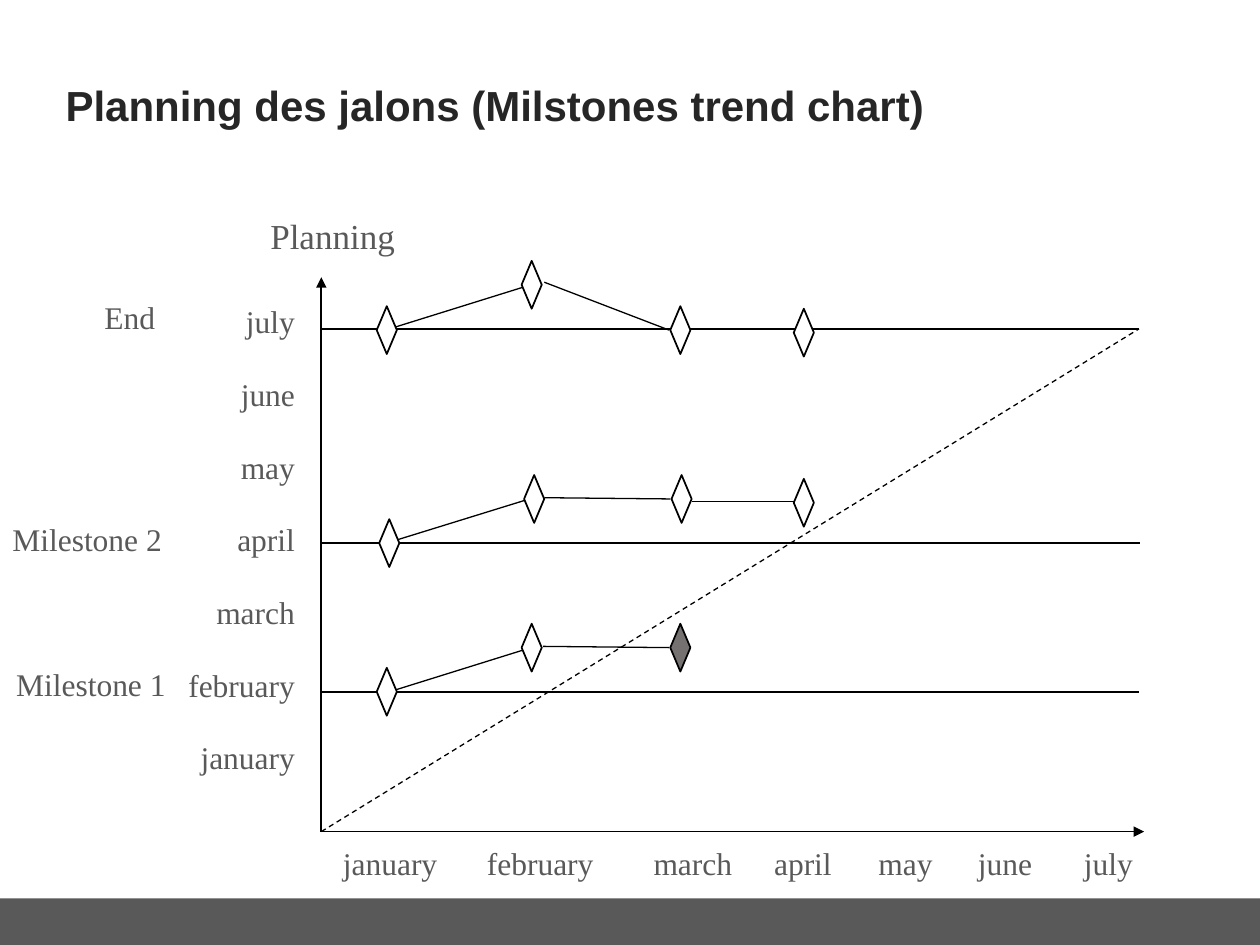
from dataclasses import dataclass
from typing import NamedTuple

import pptx
import pptx.dml.color
import pptx.enum.dml
import pptx.enum.shapes
import pptx.enum.text
import pptx.oxml
import pptx.oxml.ns
import pptx.util
from pptx.util import Inches

Align = pptx.enum.text.PP_ALIGN
Preset = pptx.enum.shapes.MSO_SHAPE


@dataclass(frozen=True)
class Theme:
    ink: str = "000000"
    title: str = "262626"
    label: str = "595959"
    band: str = "595959"
    pending: str = "FFFFFF"
    reached: str = "767171"
    title_font: str = "Arial"
    label_font: str = "Times New Roman"
    title_size: float = 24
    axis_size: float = 20
    label_size: float = 18
    axis_width: float = 1
    trend_width: float = 0.75


class Point(NamedTuple):
    x: float
    y: float


class Label(NamedTuple):
    text: str
    left: float
    top: float
    width: float
    align: Align = Align.LEFT
    size: float = 18
    height: float = 0.4


class Segment(NamedTuple):
    start: Point
    end: Point


class Milestone(NamedTuple):
    label: Label
    baseline: Segment
    markers: list[Point]
    trend: list[Segment]
    reached: bool = False


THEME = Theme()
ORIGIN = Point(2.55, 6.6)
MARKER_WIDTH, MARKER_HEIGHT = 0.16, 0.38
MONTHS = ["january", "february", "march", "april", "may", "june", "july"]
MONTH_RIGHTS = [3.57, 4.81, 5.91, 6.7, 7.5, 8.29, 9.09]
MONTH_WIDTH = 1.36
PLAN_RIGHT, PLAN_BOTTOM, PLAN_TOP = 2.44, 5.81, 2.35
TIME_TOP = 6.65

MILESTONES = [
    Milestone(
        Label("End", 0.73, 2.32, 0.84),
        Segment(Point(2.54, 2.61), Point(9.04, 2.61)),
        [Point(3.07, 2.62), Point(4.22, 2.26), Point(5.4, 2.62), Point(6.38, 2.64)],
        [Segment(Point(3.06, 2.62), Point(4.15, 2.28)),
         Segment(Point(4.32, 2.24), Point(5.31, 2.62))],
    ),
    Milestone(
        Label("Milestone 2", 0, 4.08, 1.63),
        Segment(Point(2.55, 4.31), Point(9.05, 4.31)),
        [Point(3.09, 4.31), Point(4.24, 3.96), Point(5.41, 3.96), Point(6.38, 3.99)],
        [Segment(Point(3.07, 4.31), Point(4.17, 3.97)),
         Segment(Point(4.32, 3.95), Point(5.32, 3.96)),
         Segment(Point(5.49, 3.98), Point(6.3, 3.98))],
    ),
    Milestone(
        Label("Milestone 1", 0.03, 5.23, 1.63),
        Segment(Point(2.54, 5.49), Point(9.04, 5.49)),
        [Point(3.07, 5.49), Point(4.22, 5.14), Point(5.4, 5.14)],
        [Segment(Point(3.06, 5.5), Point(4.15, 5.16)),
         Segment(Point(4.31, 5.13), Point(5.31, 5.14))],
        reached=True,
    ),
]


def color(value: str) -> pptx.dml.color.RGBColor:
    return pptx.dml.color.RGBColor.from_string(value)


def format_font(font, name: str, size: float, value: str, bold: bool = False) -> None:
    font.name = name
    font.size = pptx.util.Pt(size)
    font.bold = bold
    font.color.rgb = color(value)


def add_title(slide, text: str) -> None:
    title = slide.shapes.title
    title.left, title.top = Inches(0.42), Inches(0.46)
    title.width, title.height = Inches(9.08), Inches(0.75)
    frame = title.text_frame
    frame.text = text
    frame.word_wrap = True
    frame.auto_size = pptx.enum.text.MSO_AUTO_SIZE.NONE
    frame.vertical_anchor = pptx.enum.text.MSO_ANCHOR.MIDDLE
    paragraph = frame.paragraphs[0]
    paragraph.alignment = Align.LEFT
    format_font(paragraph.runs[0].font, THEME.title_font, THEME.title_size, THEME.title, True)


def add_label(slide, label: Label) -> None:
    shape = slide.shapes.add_textbox(
        Inches(label.left), Inches(label.top), Inches(label.width), Inches(label.height))
    frame = shape.text_frame
    frame.text = label.text
    frame.word_wrap = True
    frame.auto_size = pptx.enum.text.MSO_AUTO_SIZE.SHAPE_TO_FIT_TEXT
    paragraph = frame.paragraphs[0]
    paragraph.alignment = label.align
    format_font(paragraph.runs[0].font, THEME.label_font, label.size, THEME.label)


def add_month(slide, month: str, right: float, top: float) -> None:
    add_label(slide, Label(month, right - MONTH_WIDTH, top, MONTH_WIDTH, Align.RIGHT))


def add_shape(slide, preset: Preset, left: float, top: float, width: float, height: float,
              fill: str):
    shape = slide.shapes.add_shape(
        preset, Inches(left), Inches(top), Inches(width), Inches(height))
    shape.shadow.inherit = False
    shape.fill.solid()
    shape.fill.fore_color.rgb = color(fill)
    return shape


def add_marker(slide, center: Point, fill: str) -> None:
    shape = add_shape(slide, Preset.DIAMOND, center.x - MARKER_WIDTH / 2,
                      center.y - MARKER_HEIGHT / 2, MARKER_WIDTH, MARKER_HEIGHT, fill)
    shape.line.color.rgb = color(THEME.ink)
    shape.line.width = pptx.util.Pt(THEME.axis_width)


def add_line(slide, segment: Segment, width: float, arrow: bool = False,
             dashed: bool = False) -> None:
    start, end = segment
    connector = slide.shapes.add_connector(
        pptx.enum.shapes.MSO_CONNECTOR.STRAIGHT,
        Inches(start.x), Inches(start.y), Inches(end.x), Inches(end.y))
    connector.line.color.rgb = color(THEME.ink)
    connector.line.width = pptx.util.Pt(width)
    if dashed:
        connector.line.dash_style = pptx.enum.dml.MSO_LINE.DASH
    properties = connector._element.spPr
    if arrow:
        tail = pptx.oxml.parse_xml(
            f'<a:tailEnd {pptx.oxml.ns.nsdecls("a")} type="triangle"/>')
        properties.find(pptx.oxml.ns.qn("a:ln")).append(tail)
    properties.append(pptx.oxml.parse_xml(f'<a:effectLst {pptx.oxml.ns.nsdecls("a")}/>'))


def add_milestone(slide, milestone: Milestone) -> None:
    add_label(slide, milestone.label)
    add_line(slide, milestone.baseline, THEME.axis_width)
    for segment in milestone.trend:
        add_line(slide, segment, THEME.trend_width)
    for index, center in enumerate(milestone.markers, 1):
        last = index == len(milestone.markers)
        add_marker(slide, center,
                   THEME.reached if milestone.reached and last else THEME.pending)


def main() -> None:
    presentation = pptx.Presentation()
    presentation.slide_width, presentation.slide_height = Inches(10), Inches(7.5)
    slide = presentation.slides.add_slide(presentation.slide_layouts[5])
    band = add_shape(slide, Preset.RECTANGLE, 0, 7.13, 10, 0.37, THEME.band)
    band.line.fill.background()
    add_title(slide, "Planning des jalons (Milstones trend chart)")
    for end in (Point(ORIGIN.x, 2.2), Point(9.08, ORIGIN.y)):
        add_line(slide, Segment(ORIGIN, end), THEME.axis_width, arrow=True)
    add_label(slide, Label("Planning", 1.53, 1.65, 2.22, Align.CENTER, THEME.axis_size, 0.44))
    step = (PLAN_BOTTOM - PLAN_TOP) / (len(MONTHS) - 1)
    for index, (month, right) in enumerate(zip(MONTHS, MONTH_RIGHTS)):
        add_month(slide, month, PLAN_RIGHT, PLAN_BOTTOM - index * step)
        add_month(slide, month, right, TIME_TOP)
    for milestone in MILESTONES:
        add_milestone(slide, milestone)
    add_line(slide, Segment(ORIGIN, Point(9.04, 2.61)), THEME.trend_width, dashed=True)
    presentation.save("out.pptx")


if __name__ == "__main__":
    main()
